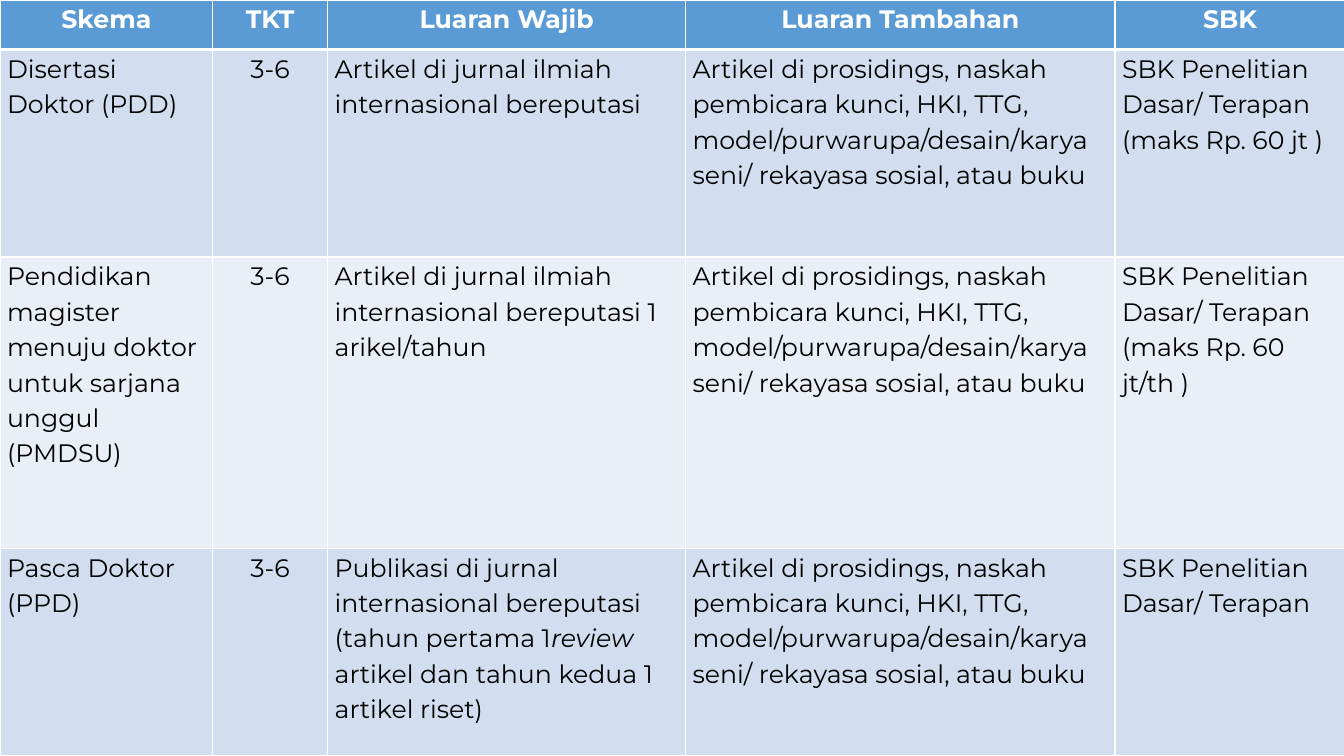
from lxml import etree
from pptx import Presentation
from pptx.dml.color import RGBColor
from pptx.enum.text import PP_ALIGN
from pptx.oxml.ns import qn
from pptx.util import Inches, Pt

LEFT, CENTER = PP_ALIGN.LEFT, PP_ALIGN.CENTER
BLANK_LAYOUT = 6

WIDTH, HEIGHT = 13.33, 7.5
COLUMN_WIDTHS = [2.11, 1.14, 3.55, 4.26, 2.28]
ROW_HEIGHTS = [0.49, 2.06, 2.89, 2.06]
TKT_COLUMN = 1

TKT = "3-6"
EXTRA_OUTPUT = (
    "Artikel di prosidings, naskah pembicara kunci, HKI, TTG, "
    "model/purwarupa/desain/karya seni/ rekayasa sosial, atau buku"
)
# A cell is a string, or a list of (text, italic) runs.
ROWS = [
    ["Skema", "TKT", "Luaran Wajib", "Luaran Tambahan", "SBK"],
    [
        "Disertasi Doktor (PDD)",
        TKT,
        "Artikel di jurnal ilmiah internasional bereputasi",
        EXTRA_OUTPUT,
        "SBK Penelitian Dasar/ Terapan (maks Rp. 60 jt )",
    ],
    [
        "Pendidikan magister menuju doktor untuk sarjana unggul (PMDSU)",
        TKT,
        "Artikel di jurnal ilmiah internasional bereputasi 1 arikel/tahun",
        EXTRA_OUTPUT,
        "SBK Penelitian Dasar/ Terapan (maks Rp. 60 jt/th )",
    ],
    [
        "Pasca Doktor (PPD)",
        TKT,
        [
            ("Publikasi di jurnal internasional bereputasi (tahun pertama 1", False),
            ("review ", True),
            ("artikel dan tahun kedua 1 artikel riset)", False),
        ],
        EXTRA_OUTPUT,
        "SBK Penelitian Dasar/ Terapan",
    ],
]


def rgb(value):
    return RGBColor.from_string(value)


class SchemeSlide:
    font = "Montserrat"
    size = 18
    line_spacing = 1.15
    side_margin = 0.07
    white, black = "FFFFFF", "000000"
    header_fill = "5B9BD5"
    band_fills = ["D2DEEF", "EAEFF7"]

    def __init__(self, presentation):
        layout = presentation.slide_layouts[BLANK_LAYOUT]
        self.slide = presentation.slides.add_slide(layout)

    def add_table(self, rows, column_widths, row_heights):
        frame = self.slide.shapes.add_table(
            len(rows), len(column_widths), 0, 0, Inches(WIDTH), Inches(HEIGHT)
        )
        table = frame.table
        for column, width in zip(table.columns, column_widths):
            column.width = Inches(width)
        for row, height in zip(table.rows, row_heights):
            row.height = Inches(height)
        for row_index, contents in enumerate(rows):
            for column_index, content in enumerate(contents):
                cell = table.cell(row_index, column_index)
                self.style_cell(cell, row_index)
                centered = row_index == 0 or column_index == TKT_COLUMN
                self.write_cell(cell, content, row_index == 0, centered)

    def style_cell(self, cell, row_index):
        cell.margin_left = cell.margin_right = Inches(self.side_margin)
        cell.margin_top = cell.margin_bottom = 0
        top = 3 if row_index == 1 else 1
        bottom = 3 if row_index == 0 else 1
        self.set_borders(cell, {"L": 1, "R": 1, "T": top, "B": bottom})
        band = self.band_fills[(row_index - 1) % len(self.band_fills)]
        cell.fill.solid()
        cell.fill.fore_color.rgb = rgb(self.header_fill if row_index == 0 else band)

    def set_borders(self, cell, widths):
        """Add white border lines; must run before the cell gets its fill."""
        properties = cell._tc.get_or_add_tcPr()
        for side, width in widths.items():
            line = etree.SubElement(properties, qn(f"a:ln{side}"), w=str(Pt(width)))
            fill = etree.SubElement(line, qn("a:solidFill"))
            etree.SubElement(fill, qn("a:srgbClr"), val=self.white)

    def write_cell(self, cell, content, header, centered):
        paragraph = cell.text_frame.paragraphs[0]
        paragraph.alignment = CENTER if centered else LEFT
        paragraph.line_spacing = self.line_spacing
        runs = [(content, False)] if isinstance(content, str) else content
        for text, italic in runs:
            run = paragraph.add_run()
            run.text = text
            run.font.name = self.font
            run.font.size = Pt(self.size)
            run.font.bold = header
            run.font.italic = italic
            run.font.color.rgb = rgb(self.white if header else self.black)


def main():
    presentation = Presentation()
    presentation.slide_width = Inches(WIDTH)
    presentation.slide_height = Inches(HEIGHT)
    SchemeSlide(presentation).add_table(ROWS, COLUMN_WIDTHS, ROW_HEIGHTS)
    presentation.save("out.pptx")


if __name__ == "__main__":
    main()
